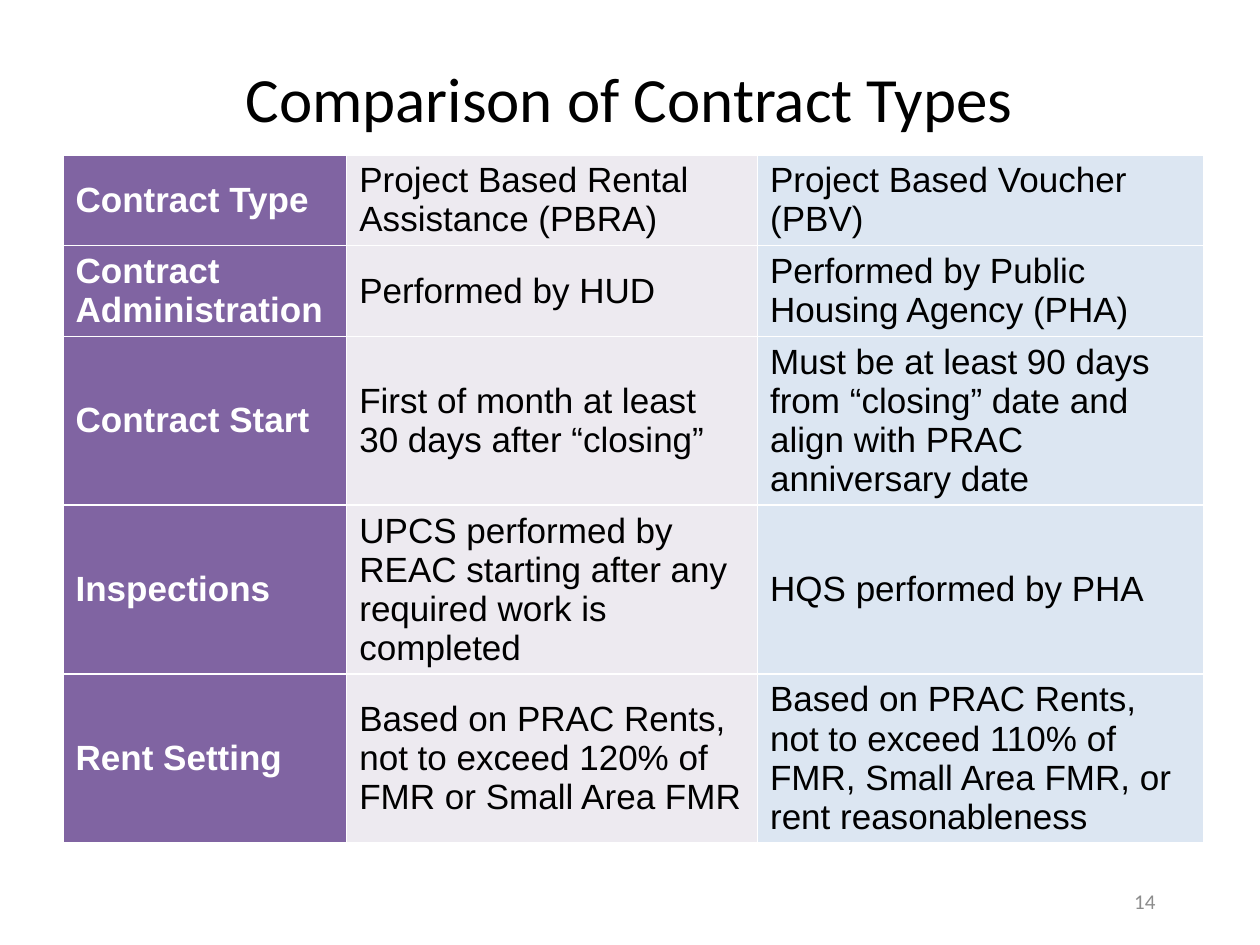
import pptx
import pptx.util
import pptx.dml.color
import pptx.enum.text
import pptx.oxml
import pptx.oxml.ns

Cm = pptx.util.Cm
Pt = pptx.util.Pt
RGBColor = pptx.dml.color.RGBColor
ALIGN = pptx.enum.text.PP_ALIGN
MIDDLE = pptx.enum.text.MSO_ANCHOR.MIDDLE

BLACK = RGBColor(0x00, 0x00, 0x00)
WHITE = RGBColor(0xFF, 0xFF, 0xFF)
GREY = RGBColor(0x8C, 0x8C, 0x8C)
PURPLE = RGBColor(0x80, 0x64, 0xA2)
LILAC = RGBColor(0xED, 0xEA, 0xF0)
BLUE = RGBColor(0xDC, 0xE6, 0xF2)

HEAD = {"name": "Arial", "size": Pt(20), "bold": True, "color": WHITE}
BODY = {"name": "Arial", "size": Pt(20), "bold": False, "color": BLACK}
TITLE = {"name": "Calibri", "size": Pt(36), "color": BLACK}
NUMBER = {"name": "Calibri", "size": Pt(12), "color": GREY}

# Width in cm, fill and text format of each column
COLUMNS = [(5.72, PURPLE, HEAD), (8.28, LILAC, BODY), (8.99, BLUE, BODY)]

# Height in cm and the texts of each row
ROWS = [
    (1.83, ("Contract Type", "Project Based Rental Assistance (PBRA)",
            "Project Based Voucher (PBV)")),
    (1.83, ("Contract Administration", "Performed by HUD",
            "Performed by Public Housing Agency (PHA)")),
    (3.4, ("Contract Start", "First of month at least 30 days after “closing”",
           "Must be at least 90 days from “closing” date and align with PRAC "
           "anniversary date")),
    (3.4, ("Inspections",
           "UPCS performed by REAC starting after any required work is completed",
           "HQS performed by PHA")),
    (3.4, ("Rent Setting",
           "Based on PRAC Rents, not to exceed 120% of FMR or Small Area FMR",
           "Based on PRAC Rents, not to exceed 110% of FMR, Small Area FMR, "
           "or rent reasonableness")),
]


def write(frame, text, form, align=ALIGN.LEFT):
    frame.word_wrap = True
    para = frame.paragraphs[0]
    para.text = text
    para.alignment = align
    for key, value in form.items():
        if key == "color":
            para.font.color.rgb = value
        else:
            setattr(para.font, key, value)


def add_title(slide, text):
    title = slide.shapes.title
    title.left, title.top = Cm(1.47), Cm(1.22)
    title.width, title.height = Cm(22.43), Cm(1.47)
    title.text_frame.vertical_anchor = MIDDLE
    write(title.text_frame, text, TITLE, ALIGN.CENTER)


def add_number(slide, text):
    box = slide.shapes.add_textbox(Cm(22.56), Cm(17.65), Cm(1.04), Cm(1.02))
    box.text_frame.vertical_anchor = MIDDLE
    write(box.text_frame, text, NUMBER, ALIGN.CENTER)


def add_borders(cell):
    """Draw white lines on all sides; they must stand before the fill."""
    props = cell._tc.get_or_add_tcPr()
    for place, side in enumerate(("lnL", "lnR", "lnT", "lnB")):
        line = pptx.oxml.parse_xml(
            f'<a:{side} {pptx.oxml.ns.nsdecls("a")} w="{int(Pt(1))}">'
            f'<a:solidFill><a:srgbClr val="{WHITE}"/></a:solidFill></a:{side}>')
        props.insert(place, line)


def add_grid(slide):
    width = sum(column[0] for column in COLUMNS)
    height = sum(row[0] for row in ROWS)
    table = slide.shapes.add_table(len(ROWS), len(COLUMNS), Cm(1.27), Cm(3.12),
                                   Cm(width), Cm(height)).table
    table.first_row = table.horz_banding = False
    for c, (wide, _, _) in enumerate(COLUMNS):
        table.columns[c].width = Cm(wide)
    for r, (high, texts) in enumerate(ROWS):
        table.rows[r].height = Cm(high)
        for c, (text, (_, fill, form)) in enumerate(zip(texts, COLUMNS)):
            cell = table.cell(r, c)
            cell.vertical_anchor = MIDDLE
            cell.fill.solid()
            cell.fill.fore_color.rgb = fill
            add_borders(cell)
            write(cell.text_frame, text, form)


def main():
    deck = pptx.Presentation()
    deck.slide_width, deck.slide_height = Cm(25.4), Cm(19.05)
    slide = deck.slides.add_slide(deck.slide_layouts.get_by_name("Title Only"))
    add_grid(slide)
    add_title(slide, "Comparison of Contract Types")
    add_number(slide, "14")
    deck.save("out.pptx")


if __name__ == "__main__":
    main()
